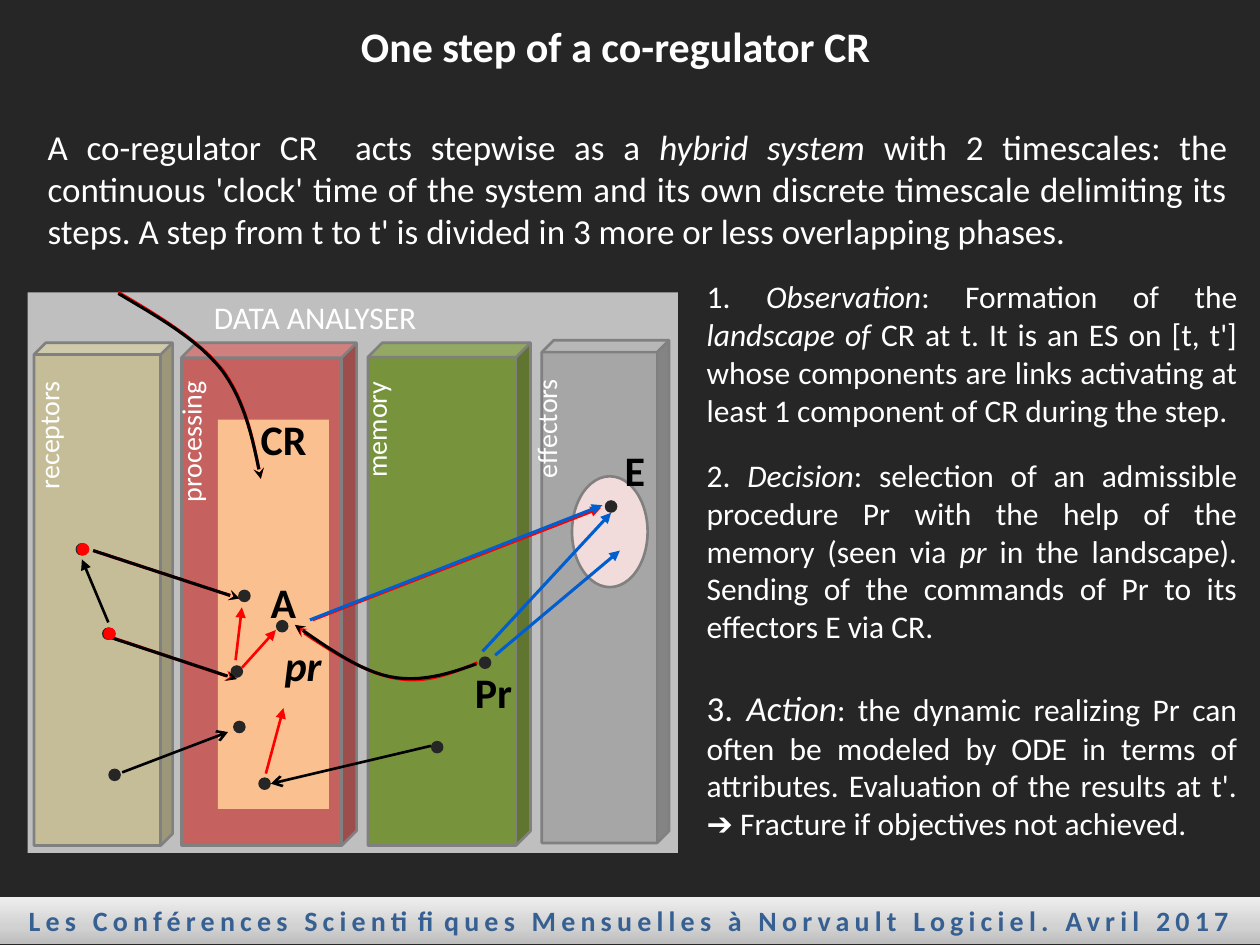
from copy import deepcopy

from lxml.etree import SubElement
from pptx import Presentation
from pptx.dml.color import RGBColor
from pptx.enum.shapes import MSO_CONNECTOR, MSO_SHAPE
from pptx.enum.text import MSO_ANCHOR, PP_ALIGN
from pptx.oxml.ns import qn
from pptx.util import Pt

PX = 9144  # 100 px to the inch

WHITE = RGBColor(0xFF, 0xFF, 0xFF)
BLACK = RGBColor(0, 0, 0)
RED = RGBColor(0xFF, 0, 0)
BLUE = RGBColor(0x00, 0x5E, 0xD0)
DARK = RGBColor(0x26, 0x26, 0x26)
OUTLINE = RGBColor(0x80, 0x80, 0x80)
PANEL = RGBColor(0xBF, 0xBF, 0xBF)
SAND = RGBColor(0xC4, 0xBD, 0x97)
BRICK = RGBColor(0xC5, 0x61, 0x5F)
OLIVE = RGBColor(0x77, 0x93, 0x3C)
STEEL = RGBColor(0xA6, 0xA6, 0xA6)
ORANGE = RGBColor(0xFA, 0xC0, 0x90)
ROSE = RGBColor(0xF2, 0xDC, 0xDB)
FOOTER_BLUE = RGBColor(0x37, 0x60, 0x92)
FOOTER_STOPS = [
    (0, RGBColor(0xBD, 0xBD, 0xBD)),
    (0.35, RGBColor(0xD1, 0xD1, 0xD1)),
    (1, RGBColor(0xEE, 0xEE, 0xEE)),
]

deck = Presentation()
deck.slide_width, deck.slide_height = 1000 * PX, 750 * PX
page = deck.slides.add_slide(deck.slide_layouts[6])
page.background.fill.solid()
page.background.fill.fore_color.rgb = DARK
shapes = page.shapes


def add_solid(kind, area, color, outlined=False):
    shape = shapes.add_shape(kind, *(value * PX for value in area))
    shape.shadow.inherit = False
    shape.fill.solid()
    shape.fill.fore_color.rgb = color
    if outlined:
        shape.line.color.rgb = OUTLINE
        shape.line.width = Pt(1.5)
    else:
        shape.line.fill.background()
    return shape


def add_text(area, spans, size, color=WHITE, bold=False, align=PP_ALIGN.LEFT):
    """Add a one-paragraph box; spans are (text, italic, size or None)."""
    box = shapes.add_textbox(*(value * PX for value in area))
    box.text_frame.word_wrap = True
    para = box.text_frame.paragraphs[0]
    para.alignment = align
    for text, italic, own_size in spans:
        span = para.add_run()
        span.text = text
        span.font.name = "Calibri"
        span.font.size = Pt(own_size or size)
        span.font.bold = bold
        span.font.italic = italic
        span.font.color.rgb = color
    return box


# Footer band
footer = add_solid(MSO_SHAPE.RECTANGLE, (0, 712, 1000, 37), WHITE)
footer.fill.gradient()
footer.fill.gradient_angle = 90
stop_list = footer._element.spPr.find(".//" + qn("a:gsLst"))
stop_list.append(deepcopy(stop_list[0]))
for stop, (position, color) in zip(footer.fill.gradient_stops, FOOTER_STOPS):
    stop.position = position
    stop.color.rgb = color
footer.text_frame.text = "Les Conférences Scientifiques Mensuelles à Norvault Logiciel. Avril 2017"
footer.text_frame.word_wrap = False
footer.text_frame.vertical_anchor = MSO_ANCHOR.MIDDLE
para = footer.text_frame.paragraphs[0]
para.alignment = PP_ALIGN.CENTER
font = para.runs[0].font
font.name, font.size, font.bold = "Calibri", Pt(16), True
font.color.rgb = FOOTER_BLUE
para.runs[0]._r.get_or_add_rPr().set("spc", "300")

# Data analyser panel with its four blocks
add_solid(MSO_SHAPE.RECTANGLE, (22, 232, 516, 445), PANEL)
add_text((160, 232, 256, 40), [("DATA ANALYSER", False, None)], 18)
blocks = [
    ("receptors", 27, 272, 110, 0.085, SAND, 20),
    ("processing", 144, 272, 139, 0.085, BRICK, 133),
    ("memory", 292, 272, 129, 0.089, OLIVE, 280),
    ("effectors", 430, 270, 101, 0.094, STEEL, 415),
]
for name, left, top, width, depth, color, label_left in blocks:
    cube = add_solid(MSO_SHAPE.CUBE, (left, top, width, 399), color, True)
    cube.adjustments[0] = depth
    label = add_text((label_left, top + 21, 47, 165), [(name, False, None)], 16,
                     align=PP_ALIGN.RIGHT)
    label.text_frame._txBody.bodyPr.set("vert", "vert270")
add_solid(MSO_SHAPE.RECTANGLE, (173, 333, 88, 309), ORANGE)
add_solid(MSO_SHAPE.OVAL, (454, 378, 60, 88), ROSE, True)

# Component dots
dots = [(219, 492), (60, 431), (81, 498), (189, 468), (183, 528), (205, 617), (380, 521),
        (342, 588), (185, 572), (86, 610), (480, 397)]
for left, top in dots:
    add_solid(MSO_SHAPE.OVAL, (left, top, 10, 10), DARK)

# Links: straight ones as connectors, curved ones as sampled Bezier outlines
straight_links = [
    ((192, 530), (219, 500), RED, 1.5, "triangle"),
    ((187, 524), (192, 482), RED, 1.5, "triangle"),
    ((211, 614), (225, 562), RED, 1.5, "triangle"),
    ((86, 494), (65, 444), BLACK, 1.5, "triangle"),
    ((97, 613), (181, 581), BLACK, 1.5, "arrow"),
    ((342, 592), (215, 622), BLACK, 1.5, "arrow"),
    ((393, 520), (492, 437), BLUE, 1.75, "triangle"),
    ((383, 517), (485, 407), BLUE, 1.75, "triangle"),
    ((74, 437), (190, 475), RED, 1.75, "stealth"),
    ((86, 505), (187, 539), RED, 1.75, "stealth"),
    ((74, 437), (190, 475), BLACK, 1.75, "stealth"),
    ((85, 505), (188, 539), BLACK, 1.75, "stealth"),
    ((248, 492), (477, 403), RED, 1.75, "triangle"),
    ((246, 492), (478, 401), BLUE, 1.75, "triangle"),
]
curved_links = [
    ([(94, 232), (126, 251), (158, 270), (177, 294), (195, 319), (201, 349), (207, 380)], RED),
    ([(94, 233), (126, 252), (158, 270), (177, 295), (195, 320), (201, 350), (207, 380)], BLACK),
    ([(379, 526), (355, 536), (336, 543), (312, 538), (288, 533), (261, 516), (235, 498)], RED),
    ([(378, 527), (356, 535), (333, 542), (309, 537), (285, 532), (260, 514), (234, 496)], BLACK),
]
links = []
for start, end, color, width, head in straight_links:
    link = shapes.add_connector(MSO_CONNECTOR.STRAIGHT,
                                *(value * PX for value in start + end))
    SubElement(link._element.spPr, qn("a:effectLst"))
    links.append((link, color, width, head))
STEPS = 12
for points, color in curved_links:
    samples = []
    for first in (0, 3):
        for step in range(1, STEPS + 1):
            t = step / STEPS
            weights = ((1 - t) ** 3, 3 * t * (1 - t) ** 2, 3 * t * t * (1 - t), t ** 3)
            samples.append(tuple(
                PX * sum(weight * point[axis]
                         for weight, point in zip(weights, points[first:first + 4]))
                for axis in (0, 1)))
    outline = shapes.build_freeform(points[0][0] * PX, points[0][1] * PX)
    outline.add_line_segments(samples, close=False)
    link = outline.convert_to_shape()
    link.shadow.inherit = False
    link.fill.background()
    links.append((link, color, 1.75, "stealth"))
for link, color, width, head in links:
    link.line.color.rgb = color
    link.line.width = Pt(width)
    SubElement(link.line._get_or_add_ln(), qn("a:tailEnd"), type=head)

for left, top in [(61, 431), (82, 498)]:
    add_solid(MSO_SHAPE.OVAL, (left, top, 10, 10), RED)

# Diagram letters
letters = [("CR", 197, 323, False), ("Pr", 367, 524, False), ("A", 205, 453, False),
           ("E", 486, 348, False), ("pr", 216, 503, True)]
for name, left, top, italic in letters:
    add_text((left, top, 78, 50), [(name, italic, None)], 24, BLACK, True)

# Title, introduction and the three phases
add_text((138, 11, 701, 50), [("One step of a co-regulator CR", False, None)], 24,
         bold=True, align=PP_ALIGN.CENTER)
passages = [
    ((28, 95, 956, 111), 20, [
        ("A co-regulator CR  acts stepwise as a ", False, None),
        ("hybrid system ", True, None),
        ("with 2 timescales: the continuous 'clock' time of the system and its own discrete "
         "timescale delimiting its steps. A step from t to t' is divided in 3 more or less "
         "overlapping phases.", False, None)]),
    ((551, 215, 441, 131), 18, [
        ("1. ", False, None),
        ("Observation", True, None),
        (": Formation of the", False, None),
        (" landscape of ", True, None),
        ("CR at t. It is an ES on [t, t'] whose components are links activating at least "
         "1 component of CR during the step.", False, None)]),
    ((551, 357, 441, 162), 18, [
        ("2. ", False, None),
        ("Decision", True, None),
        (": selection of an admissible procedure Pr with the help of the memory (seen via ",
         False, None),
        ("pr ", True, None),
        ("in the landscape). Sending of the commands of Pr to its effectors E via CR.",
         False, None)]),
    ((551, 540, 441, 135), 18, [
        ("3. ", False, 20),
        ("Action", True, 20),
        (": the dynamic realizing Pr can often be modeled by ODE in terms of attributes. "
         "Evaluation of the results at t'. ➔ Fracture if objectives not achieved.",
         False, None)]),
]
for area, size, spans in passages:
    add_text(area, spans, size, align=PP_ALIGN.JUSTIFY)

deck.save("out.pptx")
